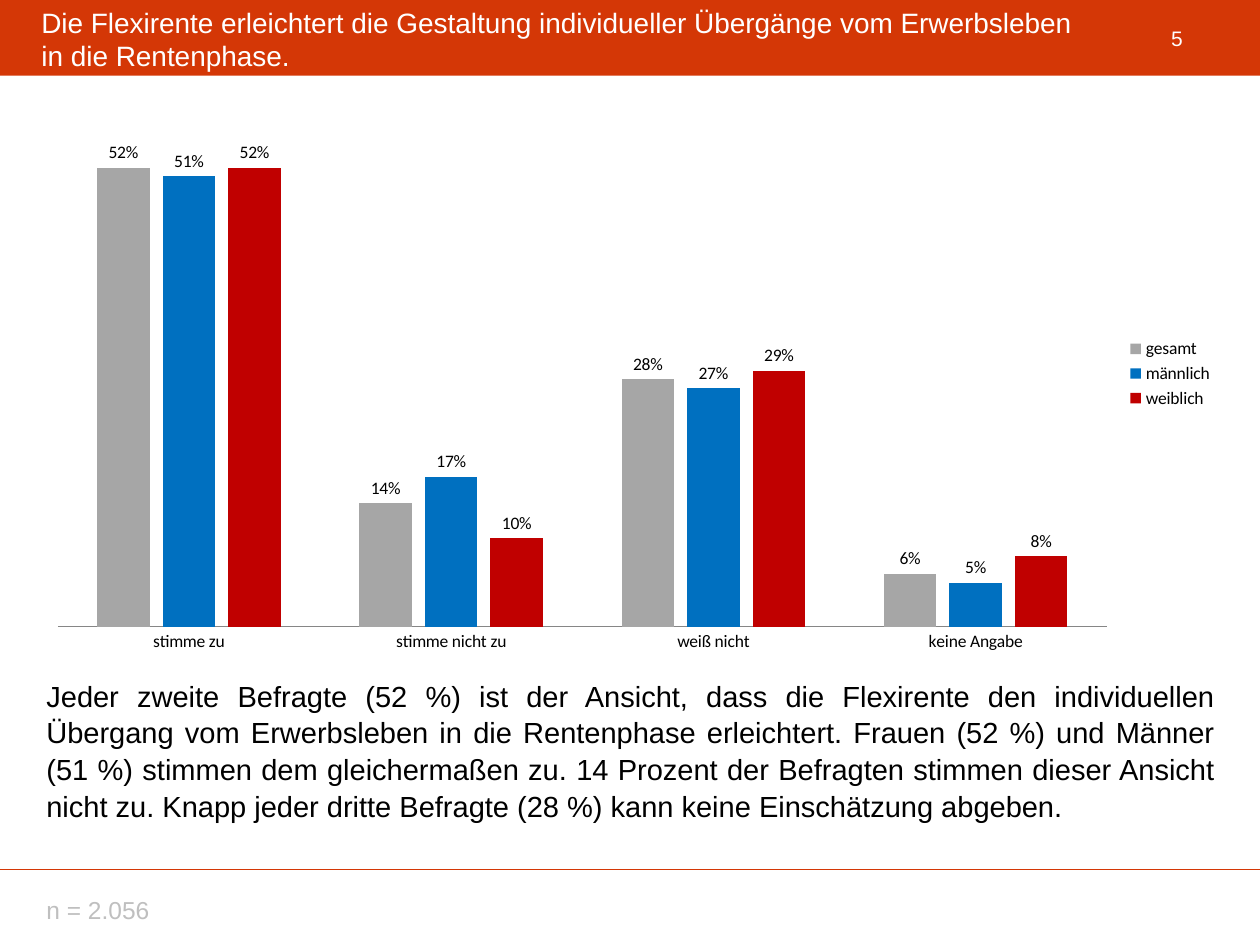
from dataclasses import dataclass

import pptx
import pptx.chart.data
import pptx.dml.color
import pptx.enum.chart
import pptx.enum.shapes
import pptx.enum.text
import pptx.oxml
import pptx.oxml.ns
import pptx.util
from pptx.util import Inches

COLORS = {
    "accent": "D43706",
    "white": "FFFFFF",
    "black": "000000",
    "note": "BFBFBF",
    "axis": "868686",
}
ALIGN = pptx.enum.text.PP_ALIGN
ANCHOR = pptx.enum.text.MSO_ANCHOR


@dataclass
class TextBlock:
    lines: list[str]
    left: float
    top: float
    width: float
    height: float
    size: float
    color: str
    align: ALIGN = ALIGN.LEFT
    anchor: ANCHOR = ANCHOR.MIDDLE
    spacing: float = 1.0


@dataclass
class Series:
    name: str
    values: list[float]
    color: str


TEXTS = [
    TextBlock(["5"], 8.94, 0.1, 0.8, 0.4, 12, "white", ALIGN.CENTER),
    TextBlock(
        ["Die Flexirente erleichtert die Gestaltung individueller Übergänge vom Erwerbsleben",
         "in die Rentenphase."],
        0.23, 0.16, 9.51, 0.3, 16, "white"),
    TextBlock(["n = 2.056"], 0.27, 7.06, 8.11, 0.32, 14, "note"),
    TextBlock(
        ["Jeder zweite Befragte (52 %) ist der Ansicht, dass die Flexirente den individuellen "
         "Übergang vom Erwerbsleben in die Rentenphase erleichtert. Frauen (52 %) und Männer "
         "(51 %) stimmen dem gleichermaßen zu. 14 Prozent der Befragten stimmen dieser Ansicht "
         "nicht zu. Knapp jeder dritte Befragte (28 %) kann keine Einschätzung abgeben."],
        0.27, 5.32, 9.46, 1.42, 16.6, "black", ALIGN.JUSTIFY, ANCHOR.TOP, 1.05),
]
CATEGORIES = ["stimme zu", "stimme nicht zu", "weiß nicht", "keine Angabe"]
SERIES = [
    Series("gesamt", [0.52, 0.14, 0.28, 0.06], "A6A6A6"),
    Series("männlich", [0.51, 0.17, 0.27, 0.05], "0070C0"),
    Series("weiblich", [0.52, 0.10, 0.29, 0.08], "C00000"),
]
PERCENT = "###0%"


def rgb(value: str) -> pptx.dml.color.RGBColor:
    return pptx.dml.color.RGBColor.from_string(value)


def add_text(slide, block: TextBlock) -> None:
    box = slide.shapes.add_textbox(
        Inches(block.left), Inches(block.top), Inches(block.width), Inches(block.height))
    frame = box.text_frame
    frame.word_wrap = True
    frame.vertical_anchor = block.anchor
    para = frame.paragraphs[0]
    para.alignment = block.align
    para.line_spacing = block.spacing
    for index, line in enumerate(block.lines):
        if index:
            para.add_line_break()
        span = para.add_run()
        span.text = line
        span.font.name = "Arial"
        span.font.size = pptx.util.Pt(block.size)
        span.font.color.rgb = rgb(COLORS[block.color])


def add_frame(slide) -> None:
    # Footer rule
    rule = slide.shapes.add_connector(
        pptx.enum.shapes.MSO_CONNECTOR.STRAIGHT,
        Inches(0), Inches(6.9), Inches(10), Inches(6.9))
    rule.line.color.rgb = rgb(COLORS["accent"])
    rule.line.width = pptx.util.Pt(0.75)
    properties = rule._element.spPr
    properties.append(pptx.oxml.ns.qn and pptx.oxml.parse_xml(
        f"<a:effectLst {pptx.oxml.ns.nsdecls('a')}/>"))

    # Title band
    band = slide.shapes.add_shape(
        pptx.enum.shapes.MSO_SHAPE.RECTANGLE, Inches(0), Inches(0), Inches(10), Inches(0.6))
    band.shadow.inherit = False
    band.fill.solid()
    band.fill.fore_color.rgb = rgb(COLORS["accent"])
    band.line.fill.background()


def set_plot_layout(chart, x: float, y: float, width: float, height: float) -> None:
    """Fix the inner plot area, in fractions of the chart."""
    area = chart._chartSpace.chart.plotArea
    for old in area.findall(pptx.oxml.ns.qn("c:layout")):
        area.remove(old)
    area.insert(0, pptx.oxml.parse_xml(
        f"<c:layout {pptx.oxml.ns.nsdecls('c')}><c:manualLayout>"
        '<c:layoutTarget val="inner"/><c:xMode val="edge"/><c:yMode val="edge"/>'
        f'<c:x val="{x}"/><c:y val="{y}"/><c:w val="{width}"/><c:h val="{height}"/>'
        "</c:manualLayout></c:layout>"))


def add_survey_chart(slide) -> None:
    data = pptx.chart.data.CategoryChartData(number_format=PERCENT)
    data.categories = CATEGORIES
    for series in SERIES:
        data.add_series(series.name, series.values)
    chart = slide.shapes.add_chart(
        pptx.enum.chart.XL_CHART_TYPE.COLUMN_CLUSTERED,
        Inches(0.27), Inches(0.68), Inches(9.46), Inches(4.57), data).chart
    chart.has_title = False
    chart.font.name = "Calibri"
    chart.font.size = pptx.util.Pt(10)
    chart.font.color.rgb = rgb(COLORS["black"])

    # Legend
    chart.has_legend = True
    chart.legend.position = pptx.enum.chart.XL_LEGEND_POSITION.RIGHT
    chart.legend.include_in_layout = False

    # Axes
    ticks = pptx.enum.chart.XL_TICK_MARK
    chart.category_axis.major_tick_mark = ticks.NONE
    chart.category_axis.format.line.color.rgb = rgb(COLORS["axis"])
    values = chart.value_axis
    values.visible = False
    values.has_major_gridlines = False
    values.minimum_scale = 0
    values.maximum_scale = 0.6
    values.tick_labels.number_format = PERCENT
    values.tick_labels.number_format_is_linked = False

    # Columns and their labels
    plot = chart.plots[0]
    plot.vary_by_categories = False
    plot.gap_width = 150
    plot.overlap = -25
    for drawn, series in zip(plot.series, SERIES):
        drawn.format.fill.solid()
        drawn.format.fill.fore_color.rgb = rgb(series.color)
        labels = drawn.data_labels
        labels.show_value = True
        labels.number_format = PERCENT
        labels.number_format_is_linked = False
        labels.position = pptx.enum.chart.XL_LABEL_POSITION.OUTSIDE_END
    set_plot_layout(chart, 0.02, 0.02, 0.88, 0.92)


def main() -> None:
    deck = pptx.Presentation()
    deck.slide_width = Inches(10)
    deck.slide_height = Inches(7.5)
    slide = deck.slides.add_slide(deck.slide_layouts[6])
    add_frame(slide)
    for block in TEXTS:
        add_text(slide, block)
    add_survey_chart(slide)
    deck.save("out.pptx")


if __name__ == "__main__":
    main()
